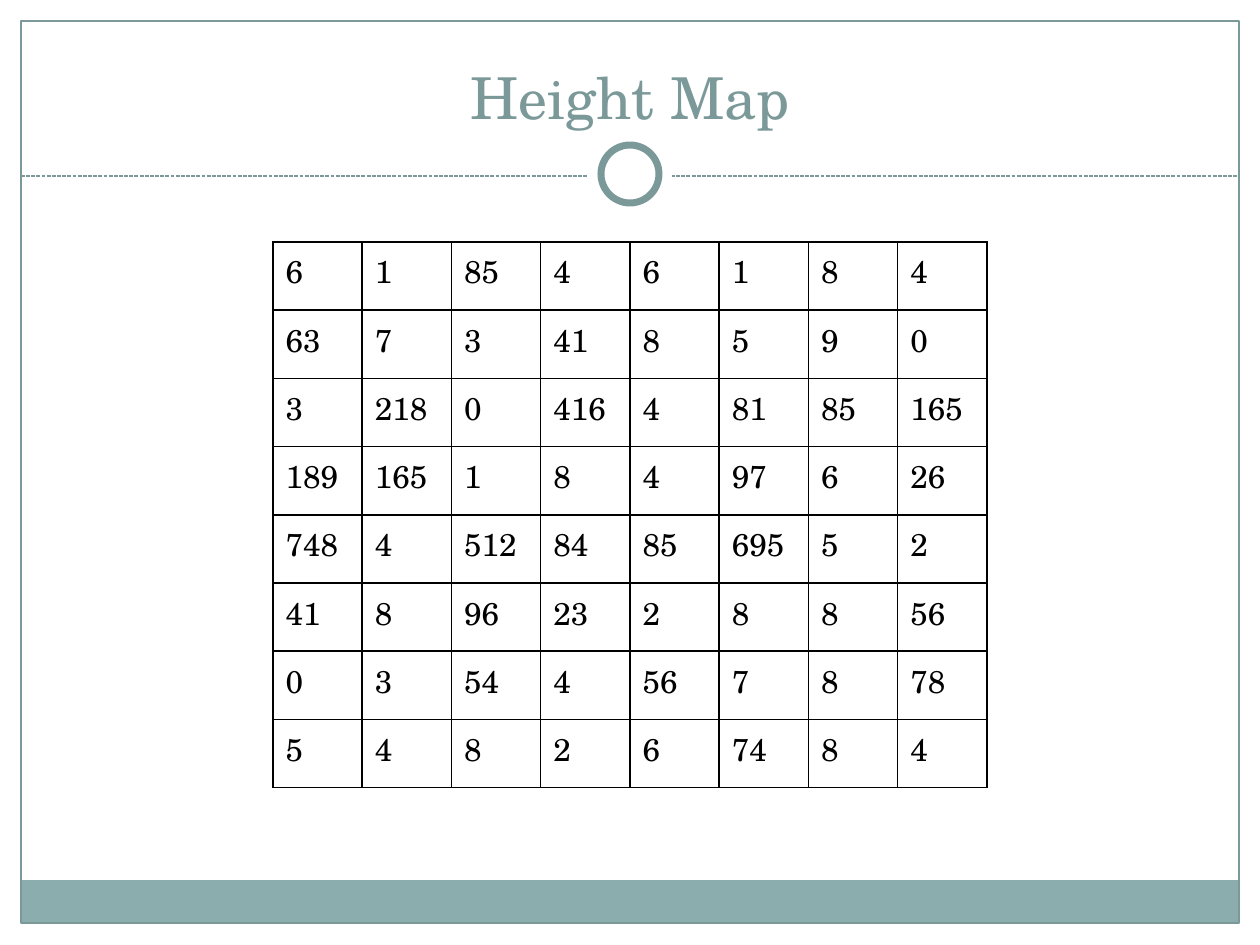
from collections import namedtuple

from lxml.etree import SubElement
from pptx import Presentation
from pptx.dml.color import RGBColor
from pptx.enum.dml import MSO_LINE_DASH_STYLE as Dash
from pptx.enum.shapes import MSO_CONNECTOR as Connector, MSO_SHAPE as Shape
from pptx.enum.text import MSO_ANCHOR as Anchor, PP_ALIGN as Align
from pptx.oxml.ns import qn
from pptx.util import Emu, Pt

Box = namedtuple("Box", "left top width height")

PX_PER_INCH = 126
FONT = "TeX Gyre Schola"
WHITE = RGBColor(0xFF, 0xFF, 0xFF)
BLACK = RGBColor(0x00, 0x00, 0x00)
TEAL = RGBColor(0x7C, 0x99, 0x9A)
BAND_TEAL = RGBColor(0x8C, 0xAD, 0xAE)

HEIGHTS = [
    [6, 1, 85, 4, 6, 1, 8, 4],
    [63, 7, 3, 41, 8, 5, 9, 0],
    [3, 218, 0, 416, 4, 81, 85, 165],
    [189, 165, 1, 8, 4, 97, 6, 26],
    [748, 4, 512, 84, 85, 695, 5, 2],
    [41, 8, 96, 23, 2, 8, 8, 56],
    [0, 3, 54, 4, 56, 7, 8, 78],
    [5, 4, 8, 2, 6, 74, 8, 4],
]


def px(length):
    return Emu(round(length * 914400 / PX_PER_INCH))


def style_text(paragraph, size, color):
    paragraph.font.name = FONT
    paragraph.font.size = Pt(size)
    paragraph.font.color.rgb = color


def add_plain_shape(slide, kind, box, fill=None, line=None, line_width=0.75):
    shape = slide.shapes.add_shape(kind, *map(px, box))
    shape.shadow.inherit = False
    if fill is None:
        shape.fill.background()
    else:
        shape.fill.solid()
        shape.fill.fore_color.rgb = fill
    if line is None:
        shape.line.fill.background()
    else:
        shape.line.color.rgb = line
        shape.line.width = Pt(line_width)


def add_circle(slide, center_x, center_y, diameter, **style):
    box = Box(center_x - diameter // 2, center_y - diameter // 2, diameter, diameter)
    add_plain_shape(slide, Shape.OVAL, box, **style)


def add_frame(slide, box):
    """Border with a band along its foot, and a dashed rule broken by a ring."""
    band_height = 43
    bottom = box.top + box.height
    band = Box(box.left, bottom - band_height, box.width, band_height)
    add_plain_shape(slide, Shape.RECTANGLE, band, fill=BAND_TEAL)
    add_plain_shape(slide, Shape.RECTANGLE, box, line=TEAL)

    rule_y = box.top + 155
    rule = slide.shapes.add_connector(
        Connector.STRAIGHT, px(box.left), px(rule_y), px(box.left + box.width), px(rule_y))
    rule.line.color.rgb = TEAL
    rule.line.width = Pt(0.75)
    rule.line.dash_style = Dash.SQUARE_DOT
    SubElement(rule._element.spPr, qn("a:effectLst"))

    center_x, center_y = box.left + box.width // 2, rule_y - 2
    add_circle(slide, center_x, center_y, 84, fill=WHITE)
    add_circle(slide, center_x, center_y, 58, fill=WHITE, line=TEAL, line_width=4)


def add_title(slide, box, text):
    frame = slide.shapes.add_textbox(*map(px, box)).text_frame
    frame.word_wrap = True
    frame.vertical_anchor = Anchor.BOTTOM
    paragraph = frame.paragraphs[0]
    paragraph.text = text
    paragraph.alignment = Align.CENTER
    style_text(paragraph, 33, TEAL)


def add_borders(cell):
    properties = cell._tc.get_or_add_tcPr()
    for index, side in enumerate(("lnL", "lnR", "lnT", "lnB")):
        line = properties.makeelement(qn(f"a:{side}"), {"w": str(Pt(1))})
        fill = SubElement(line, qn("a:solidFill"))
        SubElement(fill, qn("a:srgbClr"), val=str(BLACK))
        properties.insert(index, line)


def add_height_table(slide, box, rows):
    table = slide.shapes.add_table(len(rows), len(rows[0]), *map(px, box)).table
    table.first_row = False
    table.horz_banding = False
    for column in table.columns:
        column.width = px(box.width / len(rows[0]))
    for row, values in zip(table.rows, rows):
        row.height = px(box.height / len(rows))
        for cell, value in zip(row.cells, values):
            cell.text = str(value)
            cell.fill.background()
            style_text(cell.text_frame.paragraphs[0], 18, BLACK)
            add_borders(cell)


def main():
    presentation = Presentation()
    presentation.slide_width = px(1260)
    presentation.slide_height = px(945)
    slide = presentation.slides.add_slide(presentation.slide_layouts[6])
    add_frame(slide, Box(21, 21, 1218, 902))
    add_title(slide, Box(42, 32, 1176, 105), "Height Map")
    add_height_table(slide, Box(273, 242, 714, 546), HEIGHTS)
    presentation.save("out.pptx")


if __name__ == "__main__":
    main()
